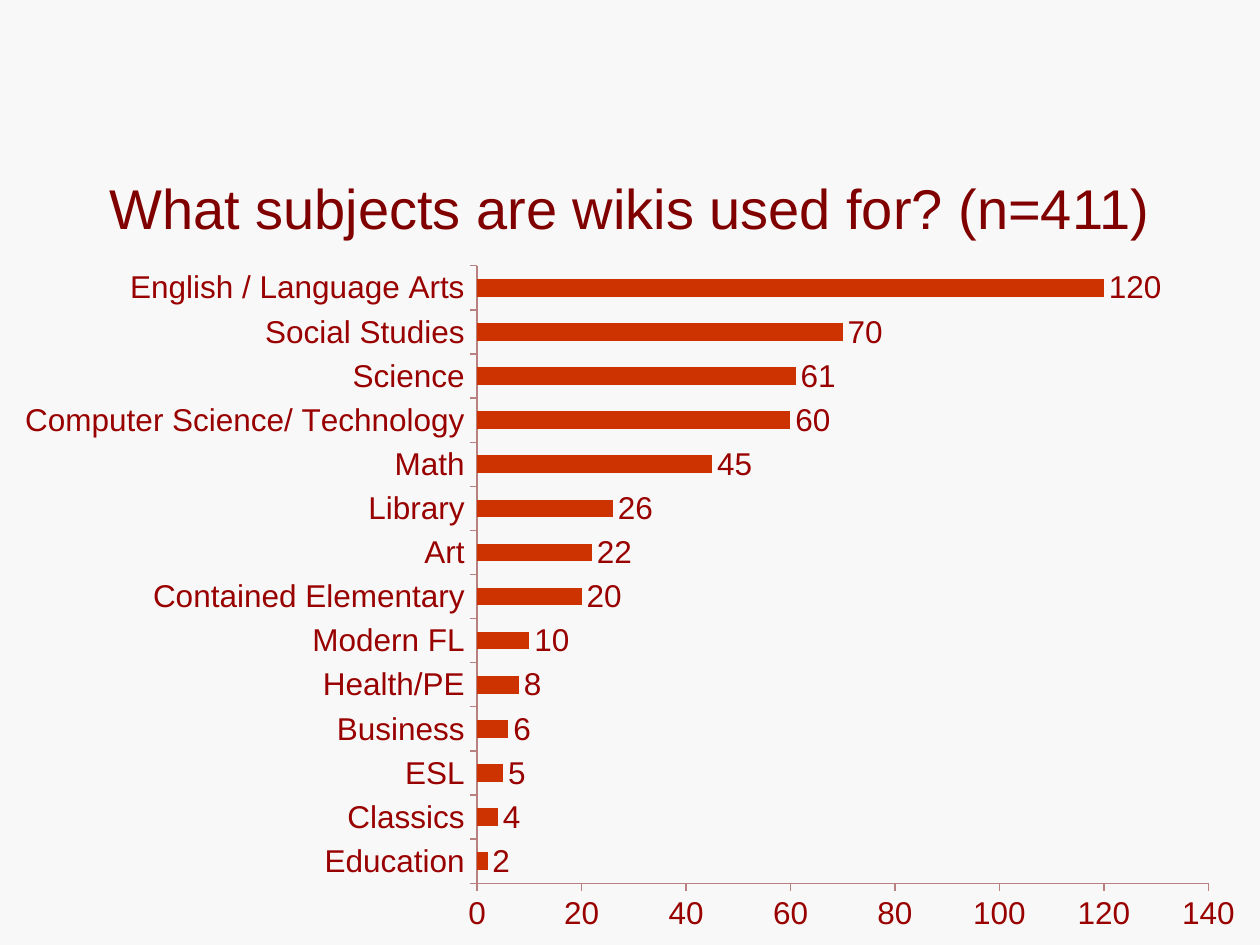
from pptx import Presentation
from pptx.chart.data import CategoryChartData
from pptx.dml.color import RGBColor
from pptx.enum.chart import XL_CHART_TYPE as ChartType
from pptx.enum.chart import XL_LABEL_POSITION as LabelPosition
from pptx.enum.chart import XL_TICK_MARK as TickMark
from pptx.enum.text import MSO_ANCHOR as Anchor
from pptx.enum.text import PP_ALIGN as Align
from pptx.util import Cm, Pt

COLORS = {
    "background": "F8F8F8",
    "title": "800000",
    "chart_text": "990000",
    "bar": "CC3300",
    "axis": "B98080",
}
FONT = "Arial"

# Bars are drawn from the bottom up.
WIKI_USES = {
    "Education": 2,
    "Classics": 4,
    "ESL": 5,
    "Business": 6,
    "Health/PE": 8,
    "Modern FL": 10,
    "Contained Elementary": 20,
    "Art": 22,
    "Library": 26,
    "Math": 45,
    "Computer Science/ Technology": 60,
    "Science": 61,
    "Social Studies": 70,
    "English / Language Arts": 120,
}


def rgb(name):
    return RGBColor.from_string(COLORS[name])


def style_font(font, size, color):
    font.name = FONT
    font.size = Pt(size)
    font.bold = False
    font.color.rgb = rgb(color)


def add_text(slide, text, left, top, width, height, *, size, color,
             align=Align.LEFT, anchor=Anchor.TOP):
    frame = slide.shapes.add_textbox(left, top, width, height).text_frame
    frame.word_wrap = True
    frame.vertical_anchor = anchor
    paragraph = frame.paragraphs[0]
    paragraph.alignment = align
    run = paragraph.add_run()
    run.text = text
    style_font(run.font, size, color)


def style_axis(axis):
    axis.has_major_gridlines = False
    axis.major_tick_mark = TickMark.OUTSIDE
    axis.minor_tick_mark = TickMark.NONE
    axis.format.line.color.rgb = rgb("axis")
    axis.format.line.width = Pt(0.75)


def add_bar_chart(slide, values, left, top, width, height):
    chart_data = CategoryChartData(number_format="General")
    chart_data.categories = list(values)
    chart_data.add_series("Series 1", list(values.values()))
    chart = slide.shapes.add_chart(
        ChartType.BAR_CLUSTERED, left, top, width, height, chart_data).chart
    chart.has_title = False
    chart.has_legend = False
    style_font(chart.font, 18, "chart_text")

    for axis in (chart.category_axis, chart.value_axis):
        style_axis(axis)
    chart.value_axis.minimum_scale = 0
    chart.value_axis.maximum_scale = 140
    chart.value_axis.major_unit = 20

    plot = chart.plots[0]
    plot.gap_width = 150
    plot.vary_by_categories = False
    bars = plot.series[0]
    bars.format.fill.solid()
    bars.format.fill.fore_color.rgb = rgb("bar")
    labels = bars.data_labels
    labels.show_value = True
    labels.position = LabelPosition.OUTSIDE_END
    style_font(labels.font, 18, "chart_text")


def main():
    deck = Presentation()
    deck.slide_width, deck.slide_height = Cm(25.4), Cm(19.05)
    slide = deck.slides.add_slide(deck.slide_layouts[6])
    slide.background.fill.solid()
    slide.background.fill.fore_color.rgb = rgb("background")

    add_text(slide, "What subjects are wikis used for? (n=411)",
             Cm(1.27), Cm(2.59), Cm(22.86), Cm(3.18),
             size=32, color="title", align=Align.CENTER, anchor=Anchor.MIDDLE)
    add_bar_chart(slide, WIKI_USES, Cm(0), Cm(5.08), Cm(25.4), Cm(13.97))
    deck.save("out.pptx")


if __name__ == "__main__":
    main()
